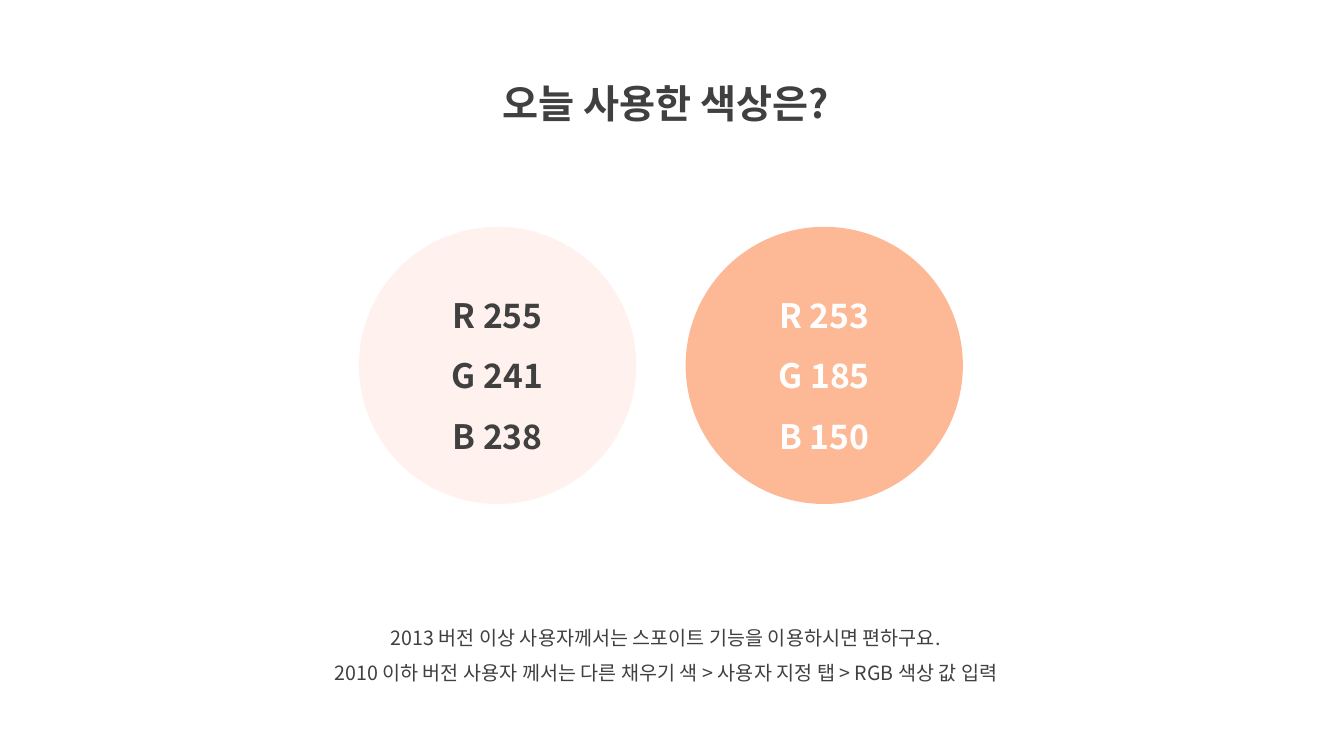
"""Build a slide that lists the two colours used, as labelled circles."""
from lxml import etree
from pptx import Presentation
from pptx.dml.color import RGBColor
from pptx.enum.shapes import MSO_SHAPE
from pptx.enum.text import MSO_ANCHOR, MSO_AUTO_SIZE, PP_ALIGN
from pptx.oxml.ns import qn
from pptx.util import Inches, Pt

OVAL = MSO_SHAPE.OVAL
MIDDLE = MSO_ANCHOR.MIDDLE
GROW = MSO_AUTO_SIZE.SHAPE_TO_FIT_TEXT
CENTER = PP_ALIGN.CENTER
FONT = "Noto Sans CJK KR"
DARK = RGBColor(64, 64, 64)
WHITE = RGBColor(255, 255, 255)
PINK = RGBColor(255, 241, 238)
PEACH = RGBColor(253, 185, 150)


def write(frame, lines, size, color, bold):
    frame.word_wrap = True
    for i, line in enumerate(lines):
        para = frame.paragraphs[0] if i == 0 else frame.add_paragraph()
        para.alignment = CENTER
        para.line_spacing = 1.5
        run = para.add_run()
        run.text = line
        font = run.font
        font.name = FONT
        font.size = Pt(size)
        font.bold = bold
        font.color.rgb = color
        east = etree.SubElement(run._r.get_or_add_rPr(), qn("a:ea"))
        east.set("typeface", FONT)


deck = Presentation()
deck.slide_width = Inches(13.33)
deck.slide_height = Inches(7.5)
slide = deck.slides.add_slide(deck.slide_layouts[6])

TITLE = ["오늘 사용한 색상은?"]
NOTES = [
    "2013 버전 이상 사용자께서는 스포이트 기능을 이용하시면 편하구요.",
    "2010 이하 버전 사용자 께서는 다른 채우기 색 > 사용자 지정 탭 > RGB 색상 값 입력",
]
for left, top, width, height, lines, size, bold in [
    (4.29, 0.5, 4.63, 0.72, TITLE, 28, True),
    (2.61, 6.04, 7.99, 0.81, NOTES, 14, False),
]:
    box = slide.shapes.add_textbox(
        Inches(left), Inches(top), Inches(width), Inches(height))
    write(box.text_frame, lines, size, DARK, bold)
    box.text_frame.auto_size = GROW

SIDE = Inches(2.75)
LEFT = Inches(3.56)
STEP = Inches(3.24)
TOP = Inches(2.25)
for col, (fill, ink) in enumerate([(PINK, DARK), (PEACH, WHITE)]):
    disc = slide.shapes.add_shape(OVAL, LEFT + col * STEP, TOP, SIDE, SIDE)
    disc.shadow.inherit = False
    disc.fill.solid()
    disc.fill.fore_color.rgb = fill
    disc.line.fill.background()
    disc.text_frame.vertical_anchor = MIDDLE
    lines = [f"{name} {value}" for name, value in zip("RGB", fill)]
    write(disc.text_frame, lines, 24, ink, True)

deck.save("out.pptx")
